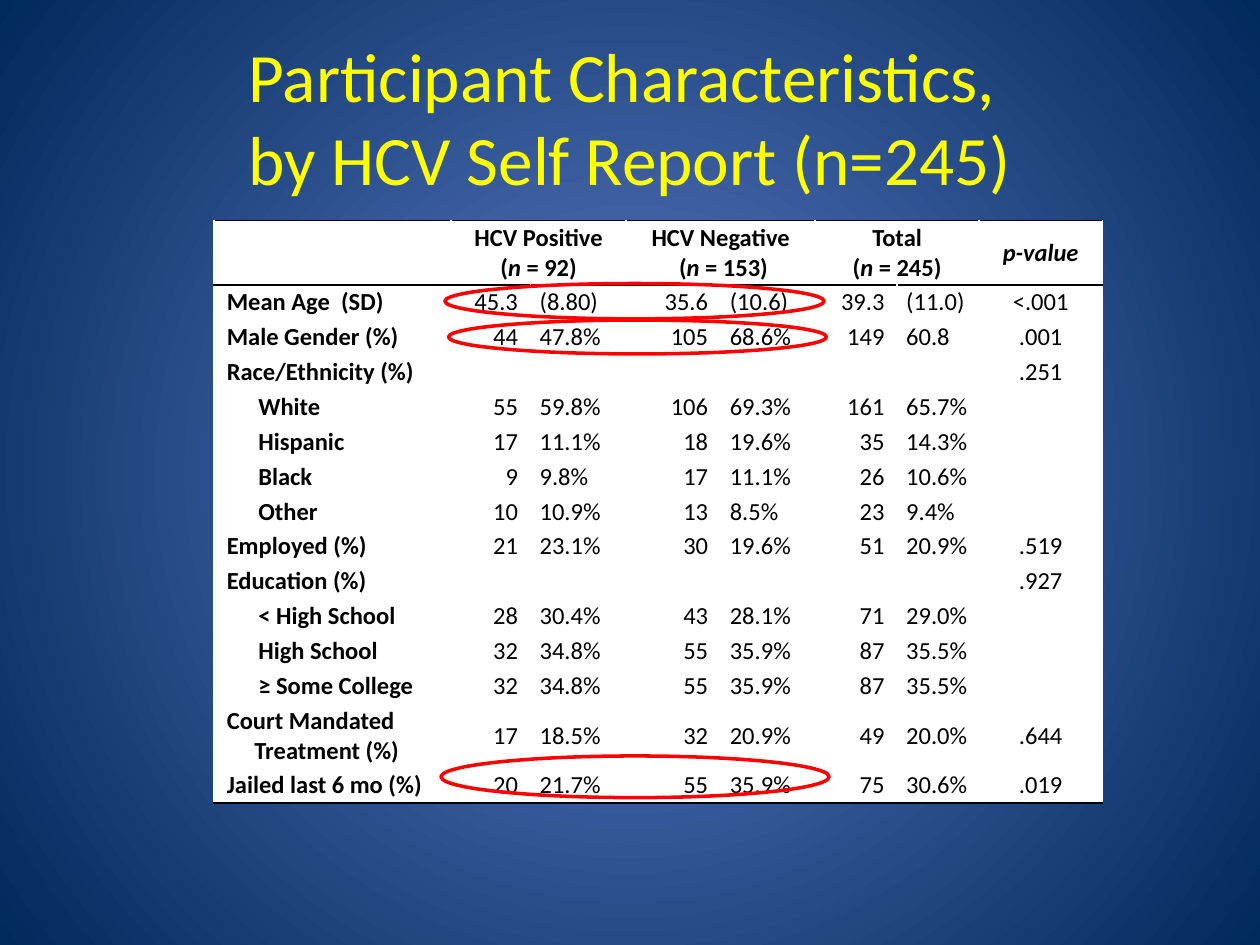
from pptx import Presentation
from pptx.dml.color import RGBColor
from pptx.enum import shapes, text
from pptx.oxml import parse_xml
from pptx.oxml.ns import nsdecls, qn
from pptx.util import Pt

FONT = "Calibri"
YELLOW = RGBColor(0xFF, 0xFF, 0x00)
BLACK = RGBColor(0x00, 0x00, 0x00)
WHITE = RGBColor(0xFF, 0xFF, 0xFF)
RED = RGBColor(0xFF, 0x00, 0x00)
LIGHT_BLUE = RGBColor(0x5E, 0x7C, 0xC5)
DARK_BLUE = RGBColor(0x00, 0x29, 0x5C)

LEFT, CENTER, RIGHT = text.PP_ALIGN.LEFT, text.PP_ALIGN.CENTER, text.PP_ALIGN.RIGHT
COLUMN_WIDTHS = [135.4, 45.4, 54.7, 54, 54, 46.8, 46.8, 70.5]
COLUMN_ALIGNMENTS = [LEFT, RIGHT, LEFT, RIGHT, LEFT, RIGHT, LEFT, CENTER]
PERCENT_COLUMNS = (2, 4, 6)
ROW_HEIGHT, TALL_ROW_HEIGHT = 19.95, 36.8
SUBGROUP_INDENT, CONTINUATION_INDENT = 18, 15.75

GROUPS = [("HCV Positive", "(", 92), ("HCV Negative", " (", 153), ("Total", "(", 245)]
SUBGROUPS = ("White", "Hispanic", "Black", "Other",
             "< High School", "High School", "≥ Some College")
CHARACTERISTICS = [
    ("Mean Age  (SD)", "45.3", "(8.80)", "35.6", "(10.6)", "39.3", "(11.0)", "<.001"),
    ("Male Gender (%)", "44", "47.8%", "105", "68.6%", "149", "60.8", ".001"),
    ("Race/Ethnicity (%)", "", "", "", "", "", "", ".251"),
    ("White", "55", "59.8%", "106", "69.3%", "161", "65.7%", ""),
    ("Hispanic", "17", "11.1%", "18", "19.6%", "35", "14.3%", ""),
    ("Black", "9", "9.8%", "17", "11.1%", "26", "10.6%", ""),
    ("Other", "10", "10.9%", "13", "8.5%", "23", "9.4%", ""),
    ("Employed (%)", "21", "23.1%", "30", "19.6%", "51", "20.9%", ".519"),
    ("Education (%)", "", "", "", "", "", "", ".927"),
    ("< High School", "28", "30.4%", "43", "28.1%", "71", "29.0%", ""),
    ("High School", "32", "34.8%", "55", "35.9%", "87", "35.5%", ""),
    ("≥ Some College", "32", "34.8%", "55", "35.9%", "87", "35.5%", ""),
    ("Court Mandated\nTreatment (%)", "17", "18.5%", "32", "20.9%", "49", "20.0%", ".644"),
    ("Jailed last 6 mo (%)", "20", "21.7%", "55", "35.9%", "75", "30.6%", ".019"),
]
# left, top, width, height
HIGHLIGHTS = [
    (254.2, 162, 216.7, 20.2),
    (252, 432, 221.8, 23.8),
    (256.3, 182.9, 216, 19.4),
]


def add_rule(cell, side):
    """Draw a 1 pt black border on the top ("T") or bottom ("B") of a cell."""
    cell._tc.get_or_add_tcPr().insert(0, parse_xml(
        f'<a:ln{side} {nsdecls("a")} w="12700"><a:solidFill>'
        f'<a:srgbClr val="{BLACK}"/></a:solidFill></a:ln{side}>'))


def indent(paragraph, points):
    properties = paragraph._p.get_or_add_pPr()
    properties.set("marL", str(Pt(points)))
    properties.set("indent", "0")


presentation = Presentation()
presentation.slide_width, presentation.slide_height = Pt(720), Pt(540)
slide = presentation.slides.add_slide(presentation.slide_layouts[5])

# Radial background
background = slide.background.fill
background.gradient()
for stop, color in zip(background.gradient_stops, (LIGHT_BLUE, DARK_BLUE)):
    stop.color.rgb = color
gradient = slide.element.find(".//" + qn("a:gradFill"))
gradient.replace(gradient.find(qn("a:lin")), parse_xml(
    f'<a:path {nsdecls("a")} path="circle">'
    '<a:fillToRect l="50000" t="50000" r="50000" b="50000"/></a:path>'))

# Title
title = slide.shapes.title
title.left, title.top, title.width, title.height = Pt(36), Pt(21.6), Pt(648), Pt(90)
title.text_frame.text = "Participant Characteristics, \vby HCV Self Report (n=245)"
title.text_frame.vertical_anchor = text.MSO_ANCHOR.MIDDLE
heading = title.text_frame.paragraphs[0]
heading.alignment = CENTER
for run in heading.runs:
    run.font.name, run.font.size, run.font.color.rgb = FONT, Pt(39.6), YELLOW

# Table
row_heights = [TALL_ROW_HEIGHT] + [
    TALL_ROW_HEIGHT if "\n" in row[0] else ROW_HEIGHT for row in CHARACTERISTICS]
table = slide.shapes.add_table(
    len(row_heights), len(COLUMN_WIDTHS), Pt(122.4), Pt(126),
    Pt(sum(COLUMN_WIDTHS)), Pt(sum(row_heights))).table
table.first_row = table.horz_banding = False
for column, width in zip(table.columns, COLUMN_WIDTHS):
    column.width = Pt(width)
for row, height in zip(table.rows, row_heights):
    row.height = Pt(height)

for group, (name, opening, count) in enumerate(GROUPS):
    first = 1 + 2 * group
    header = table.cell(0, first)
    header.merge(table.cell(0, first + 1))
    header.text_frame.text = name
    size_line = header.text_frame.add_paragraph()
    for part in (opening, "n", f" = {count})"):
        run = size_line.add_run()
        run.text = part
        run.font.italic = part == "n"
p_value = table.cell(0, len(COLUMN_WIDTHS) - 1)
p_value.text_frame.text = "p-value"
p_value.text_frame.paragraphs[0].runs[0].font.italic = True

for r, values in enumerate(CHARACTERISTICS, start=1):
    for c, value in enumerate(values):
        table.cell(r, c).text_frame.text = value
    label = table.cell(r, 0).text_frame.paragraphs
    if values[0] in SUBGROUPS:
        indent(label[0], SUBGROUP_INDENT)
    for continuation in label[1:]:
        indent(continuation, CONTINUATION_INDENT)

last_row = len(CHARACTERISTICS)
for r in range(last_row + 1):
    for c, alignment in enumerate(COLUMN_ALIGNMENTS):
        cell = table.cell(r, c)
        tight = r > 0 and c in PERCENT_COLUMNS
        cell.margin_left = cell.margin_right = Pt(5.2 if tight else 7.2)
        cell.margin_top = cell.margin_bottom = Pt(0 if tight else 1.4)
        cell.vertical_anchor = text.MSO_ANCHOR.MIDDLE
        cell.fill.solid()
        cell.fill.fore_color.rgb = WHITE
        if r in (0, last_row):
            add_rule(cell, "B")
        if r in (0, 1):
            add_rule(cell, "T")
        for paragraph in cell.text_frame.paragraphs:
            paragraph.alignment = CENTER if r == 0 else alignment
            for run in paragraph.runs:
                run.font.name, run.font.size = FONT, Pt(14)
                run.font.color.rgb = BLACK
                run.font.bold = r == 0 or c == 0
            if not paragraph.runs:
                paragraph._p.append(parse_xml(f'<a:endParaRPr {nsdecls("a")} sz="1400"/>'))

# Ellipses around the significant differences
for left, top, width, height in HIGHLIGHTS:
    highlight = slide.shapes.add_shape(
        shapes.MSO_SHAPE.OVAL, Pt(left), Pt(top), Pt(width), Pt(height))
    highlight.shadow.inherit = False
    highlight.fill.background()
    highlight.line.color.rgb = RED
    highlight.line.width = Pt(2)

presentation.save("out.pptx")
